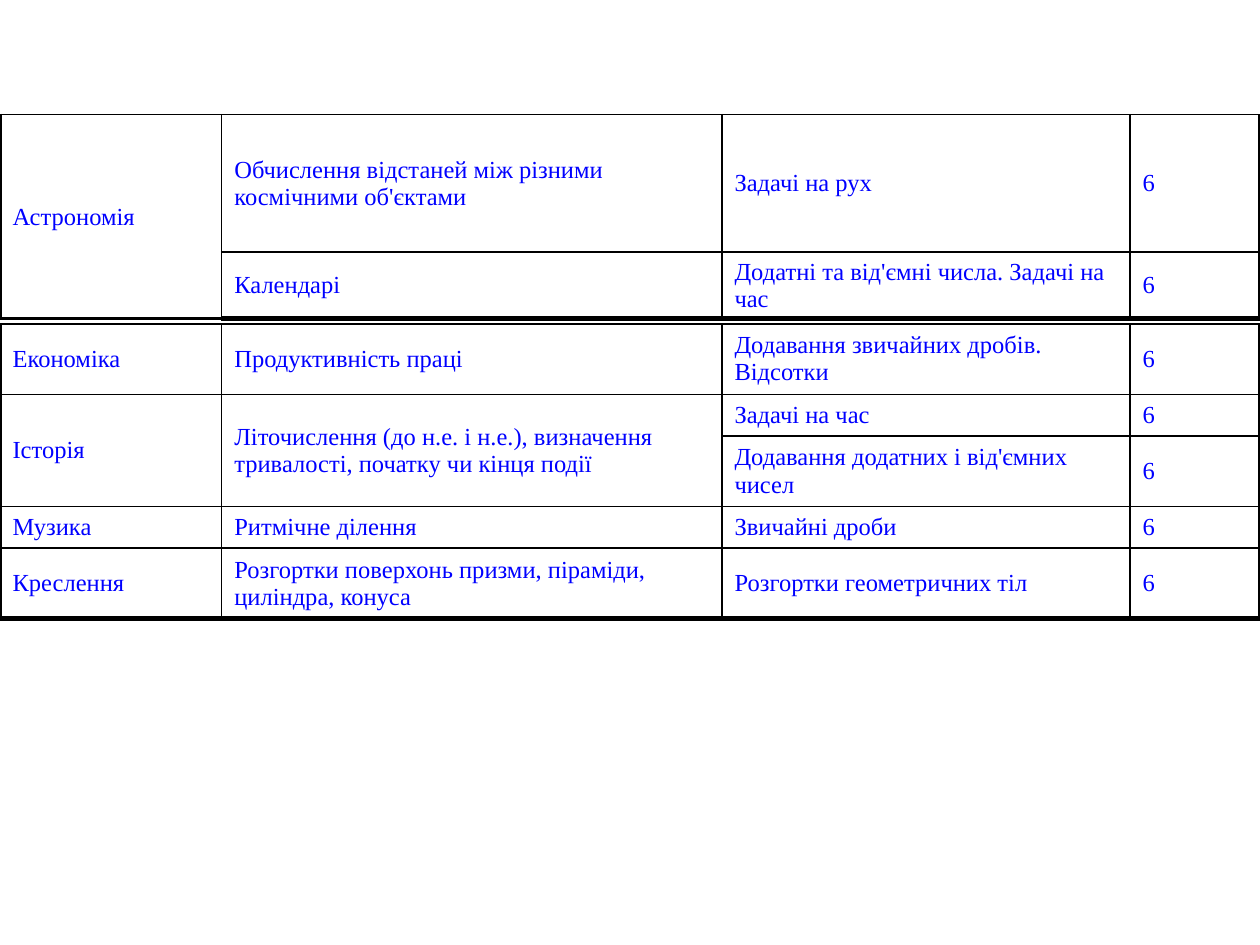
from dataclasses import dataclass

from lxml import etree
from pptx import Presentation
from pptx.dml.color import RGBColor
from pptx.enum.text import MSO_ANCHOR
from pptx.oxml.ns import qn
from pptx.util import Inches, Pt

MIDDLE = MSO_ANCHOR.MIDDLE
BLANK_LAYOUT = 6


@dataclass(frozen=True)
class Theme:
    font: str = "Times New Roman"
    size: float = 14
    text: str = "0000FF"
    fill: str = "FFFFFF"
    line: str = "000000"
    thin: float = 1
    medium: float = 2.25
    thick: float = 3


THEME = Theme()
COLUMN_WIDTHS = [1.76, 3.97, 3.24, 1.03]

# None marks a cell that continues the one above it
ASTRONOMY_ROWS = [
    ["Астрономія", "Обчислення відстаней між різними космічними об'єктами",
     "Задачі на рух", "6"],
    [None, "Календарі", "Додатні та від'ємні числа. Задачі на час", "6"],
]
SUBJECT_ROWS = [
    ["Економіка", "Продуктивність праці",
     "Додавання звичайних дробів. Відсотки", "6"],
    ["Історія",
     "Літочислення (до н.е. і н.е.), визначення тривалості, початку чи кінця події",
     "Задачі на час", "6"],
    [None, None, "Додавання додатних і від'ємних чисел", "6"],
    ["Музика", "Ритмічне ділення", "Звичайні дроби", "6"],
    ["Креслення", "Розгортки поверхонь призми, піраміди, циліндра, конуса",
     "Розгортки геометричних тіл", "6"],
]


def write_text(cell, text, font, size, color, anchor=MIDDLE):
    cell.vertical_anchor = anchor
    span = cell.text_frame.paragraphs[0].add_run()
    span.text = text
    span.font.name = font
    span.font.size = Pt(size)
    span.font.color.rgb = RGBColor.from_string(color)


def set_borders(cell, widths, color):
    """Draw the cell's sides; widths are left, right, top, bottom in points."""
    properties = cell._tc.get_or_add_tcPr()
    for side, width in zip("LRTB", widths):
        line = etree.SubElement(properties, qn(f"a:ln{side}"), w=str(Pt(width)))
        fill = etree.SubElement(line, qn("a:solidFill"))
        etree.SubElement(fill, qn("a:srgbClr"), val=color)


def add_subject_table(page, rows, left, top, width, row_heights, first_bottom):
    """Place a table with thick outer sides and bottom, and thin inner lines."""
    table = page.shapes.add_table(
        len(rows), len(COLUMN_WIDTHS), Inches(left), Inches(top),
        Inches(width), Inches(sum(row_heights))).table
    table.first_row = table.horz_banding = False
    scale = width / sum(COLUMN_WIDTHS)
    for column, column_width in zip(table.columns, COLUMN_WIDTHS):
        column.width = Inches(column_width * scale)
    for row, height in zip(table.rows, row_heights):
        row.height = Inches(height)

    last_row, last_column = len(rows) - 1, len(COLUMN_WIDTHS) - 1
    for i, texts in enumerate(rows):
        for j, text in enumerate(texts):
            cell = table.cell(i, j)
            # A merged cell takes the bottom line of its last row
            end = i
            while end < last_row and rows[end + 1][j] is None:
                end += 1
            bottom = THEME.thin
            if end == last_row:
                bottom = first_bottom if j == 0 else THEME.thick
            set_borders(cell, [THEME.thick if j == 0 else THEME.thin,
                               THEME.thick if j == last_column else THEME.thin,
                               THEME.thin, bottom], THEME.line)
            cell.fill.solid()
            cell.fill.fore_color.rgb = RGBColor.from_string(THEME.fill)
            if text is not None:
                write_text(cell, text, font=THEME.font, size=THEME.size,
                           color=THEME.text)
                if end > i:
                    cell.merge(table.cell(end, j))


def main():
    deck = Presentation()
    deck.slide_width, deck.slide_height = Inches(10), Inches(7.5)
    page = deck.slides.add_slide(deck.slide_layouts[BLANK_LAYOUT])

    # Remaining subjects, then astronomy above them
    add_subject_table(page, SUBJECT_ROWS, 0, 2.57, 10,
                      [0.56, 0.33, 0.56, 0.33, 0.56], first_bottom=THEME.thick)
    add_subject_table(page, ASTRONOMY_ROWS, 0, 0.91, 10,
                      [1.09, 0.43], first_bottom=THEME.medium)
    deck.save("out.pptx")


if __name__ == "__main__":
    main()
